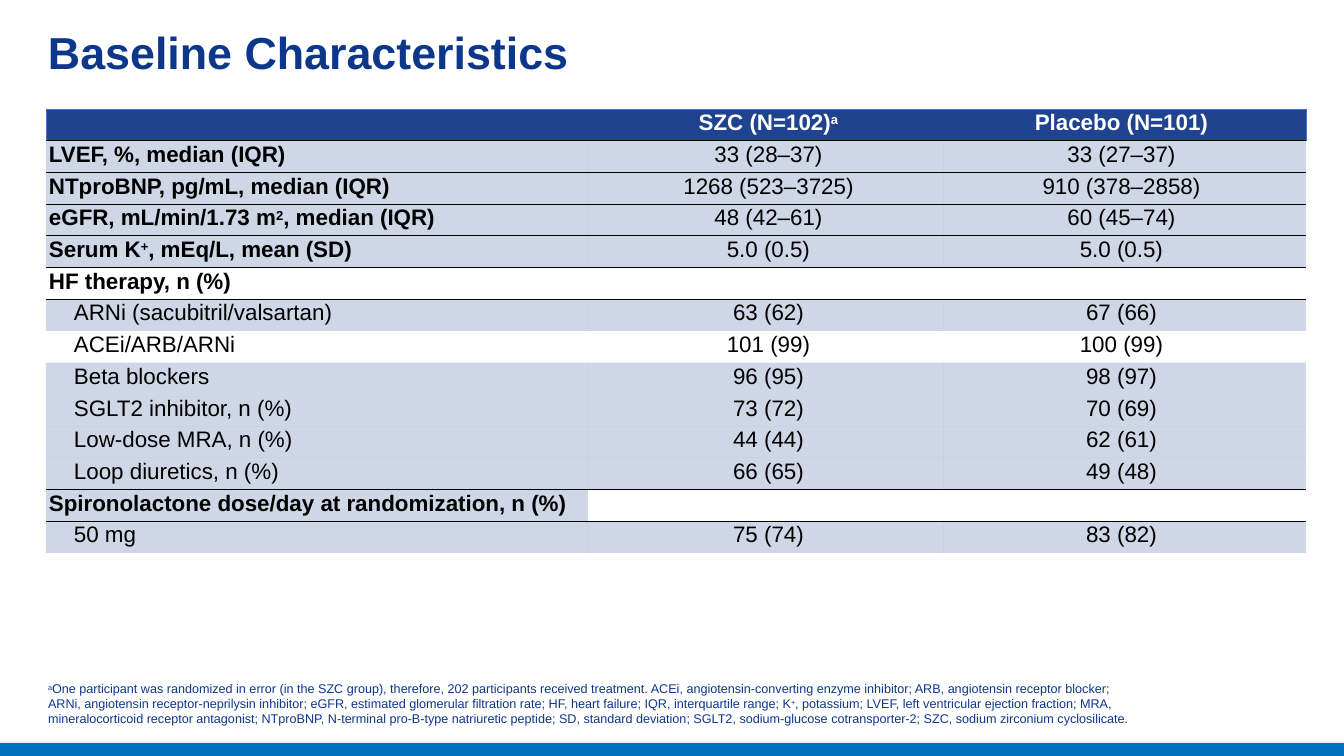
from dataclasses import dataclass

from lxml import etree
from pptx import Presentation
from pptx import util as u
from pptx.dml.color import RGBColor
from pptx.enum import shapes, text
from pptx.oxml import ns

WIDTH, HEIGHT = 1344, 756
EMU_PER_PX = 12192000 / WIDTH


@dataclass(frozen=True)
class Theme:
    font: str = "Arial"
    navy: str = "0D378A"
    header: str = "1F438F"
    header_edge: str = "4471C4"
    bar: str = "006FC0"
    ink: str = "000000"
    white: str = "FFFFFF"
    title_size: int = 32
    table_size: int = 16
    note_size: int = 9
    tint_percent: int = 21


THEME = Theme()
COLUMNS = [542, 356, 362]
HEADINGS = ["", "SZC (N=102)^a", "Placebo (N=101)"]
# is a main row, number of tinted cells, texts
ROWS = [
    (True, 3, ["LVEF, %, median (IQR)", "33 (28–37)", "33 (27–37)"]),
    (True, 3, ["NTproBNP, pg/mL, median (IQR)", "1268 (523–3725)", "910 (378–2858)"]),
    (True, 3, ["eGFR, mL/min/1.73 m^2^, median (IQR)", "48 (42–61)", "60 (45–74)"]),
    (True, 3, ["Serum K^+^, mEq/L, mean (SD)", "5.0 (0.5)", "5.0 (0.5)"]),
    (True, 0, ["HF therapy, n (%)"]),
    (False, 3, ["ARNi (sacubitril/valsartan)", "63 (62)", "67 (66)"]),
    (False, 0, ["ACEi/ARB/ARNi", "101 (99)", "100 (99)"]),
    (False, 3, ["Beta blockers", "96 (95)", "98 (97)"]),
    (False, 3, ["SGLT2 inhibitor, n (%)", "73 (72)", "70 (69)"]),
    (False, 3, ["Low-dose MRA, n (%)", "44 (44)", "62 (61)"]),
    (False, 3, ["Loop diuretics, n (%)", "66 (65)", "49 (48)"]),
    (True, 1, ["Spironolactone dose/day at randomization, n (%)"]),
    (False, 3, ["50 mg", "75 (74)", "83 (82)"]),
]
FOOTNOTE = (
    "^a^One participant was randomized in error (in the SZC group), therefore, "
    "202 participants received treatment. ACEi, angiotensin-converting enzyme "
    "inhibitor; ARB, angiotensin receptor blocker; ARNi, angiotensin "
    "receptor-neprilysin inhibitor; eGFR, estimated glomerular filtration rate; "
    "HF, heart failure; IQR, interquartile range; K^+^, potassium; LVEF, left "
    "ventricular ejection fraction; MRA, mineralocorticoid receptor antagonist; "
    "NTproBNP, N-terminal pro-B-type natriuretic peptide; SD, standard deviation; "
    "SGLT2, sodium-glucose cotransporter-2; SZC, sodium zirconium cyclosilicate."
)


def px(length):
    return u.Emu(round(length * EMU_PER_PX))


def set_all(target, **values):
    for name, value in values.items():
        setattr(target, name, value)


def write(paragraph, marked, size, color, bold=False):
    """Add runs; parts between carets are superscript."""
    for index, part in enumerate(marked.split("^")):
        if not part:
            continue
        run = paragraph.add_run()
        run.text = part
        set_all(run.font, name=THEME.font, size=u.Pt(size), bold=bold)
        run.font.color.rgb = RGBColor.from_string(color)
        if index % 2:
            run._r.get_or_add_rPr().set("baseline", "26000")


def set_borders(cell, edges):
    """Draw the edges given as {side: (color, points)} and clear the others."""
    properties = cell._tc.get_or_add_tcPr()
    for side in "LRTB":
        line = etree.SubElement(properties, ns.qn(f"a:ln{side}"))
        if side in edges:
            color, points = edges[side]
            line.set("w", str(u.Pt(points)))
            fill = etree.SubElement(line, ns.qn("a:solidFill"))
            etree.SubElement(fill, ns.qn("a:srgbClr"), val=color)
        else:
            line.set("w", "0")
            etree.SubElement(line, ns.qn("a:noFill"))


def fill_cell(cell, color, percent):
    cell.fill.solid()
    cell.fill.fore_color.rgb = RGBColor.from_string(color)
    if percent < 100:
        color_element = cell._tc.tcPr.find(ns.qn("a:solidFill"))[0]
        etree.SubElement(color_element, ns.qn("a:alpha"), val=str(percent * 1000))


def add_title(slide, box, title):
    shape = slide.shapes.title
    set_all(shape, **dict(zip(("left", "top", "width", "height"), map(px, box))))
    frame = shape.text_frame
    set_all(frame, margin_left=px(2), margin_right=0, margin_top=px(2),
            margin_bottom=0, word_wrap=True, auto_size=text.MSO_AUTO_SIZE.NONE,
            vertical_anchor=text.MSO_ANCHOR.TOP)
    frame.paragraphs[0].alignment = text.PP_ALIGN.LEFT
    write(frame.paragraphs[0], title, THEME.title_size, THEME.navy, True)


def add_table(slide, box):
    count, last = len(ROWS) + 1, len(COLUMNS) - 1
    table = slide.shapes.add_table(count, len(COLUMNS), *map(px, box)).table
    set_all(table, first_row=False, horz_banding=False)
    for column, column_width in zip(table.columns, COLUMNS):
        column.width = px(column_width)
    for row in table.rows:
        row.height = px(box[3] / count)

    main_rows = [False] + [main for main, _, _ in ROWS] + [False]
    rule, edge = (THEME.ink, 1), (THEME.header_edge, 0.5)
    for row_index, (main, tinted, texts) in enumerate([(True, 3, HEADINGS)] + ROWS):
        heading = row_index == 0
        if len(texts) < len(COLUMNS):
            table.cell(row_index, tinted).merge(table.cell(row_index, last))
        for column_index in range(len(COLUMNS)):
            cell = table.cell(row_index, column_index)
            label = column_index == 0
            indent = (3 if main else 28) if label else (5 if column_index == 1 else 0)
            set_all(cell, margin_left=px(indent), margin_top=0, margin_bottom=0,
                    margin_right=px(7 if column_index == last else 0),
                    vertical_anchor=text.MSO_ANCHOR.TOP)

            edges = {}
            if heading:
                edges["T"] = edge
                if label:
                    edges["L"] = edge
                if column_index == last:
                    edges["R"] = edge
            elif main_rows[row_index - 1] or main_rows[row_index]:
                edges["T"] = rule
            if main_rows[row_index] or main_rows[row_index + 1]:
                edges["B"] = rule
            set_borders(cell, edges)
            if column_index < tinted:
                fill_cell(cell, THEME.header, 100 if heading else THEME.tint_percent)
            else:
                cell.fill.background()

            if column_index < len(texts):
                paragraph = cell.text_frame.paragraphs[0]
                set_all(paragraph, line_spacing=u.Pt(18.9),
                        alignment=text.PP_ALIGN.LEFT if label else text.PP_ALIGN.CENTER)
                write(paragraph, texts[column_index], THEME.table_size,
                      THEME.white if heading else THEME.ink,
                      heading or (main and label))


def add_footnote(slide, box):
    frame = slide.shapes.add_textbox(*map(px, box)).text_frame
    set_all(frame, margin_left=px(5), margin_right=0, margin_top=px(2),
            margin_bottom=0, word_wrap=True)
    write(frame.paragraphs[0], FOOTNOTE, THEME.note_size, THEME.navy)


def add_bottom_bar(slide, box):
    bar = slide.shapes.add_shape(shapes.MSO_SHAPE.RECTANGLE, *map(px, box))
    bar.shadow.inherit = False
    bar.fill.solid()
    bar.fill.fore_color.rgb = RGBColor.from_string(THEME.bar)
    bar.line.fill.background()


def main():
    presentation = Presentation()
    set_all(presentation, slide_width=px(WIDTH), slide_height=px(HEIGHT))
    slide = presentation.slides.add_slide(presentation.slide_layouts[5])
    add_bottom_bar(slide, (0, 743, WIDTH, 13))
    add_table(slide, (46, 109, sum(COLUMNS), 444))
    add_title(slide, (46, 23, 545, 56), "Baseline Characteristics")
    add_footnote(slide, (43, 679, 1091, 48))
    presentation.save("out.pptx")


if __name__ == "__main__":
    main()
